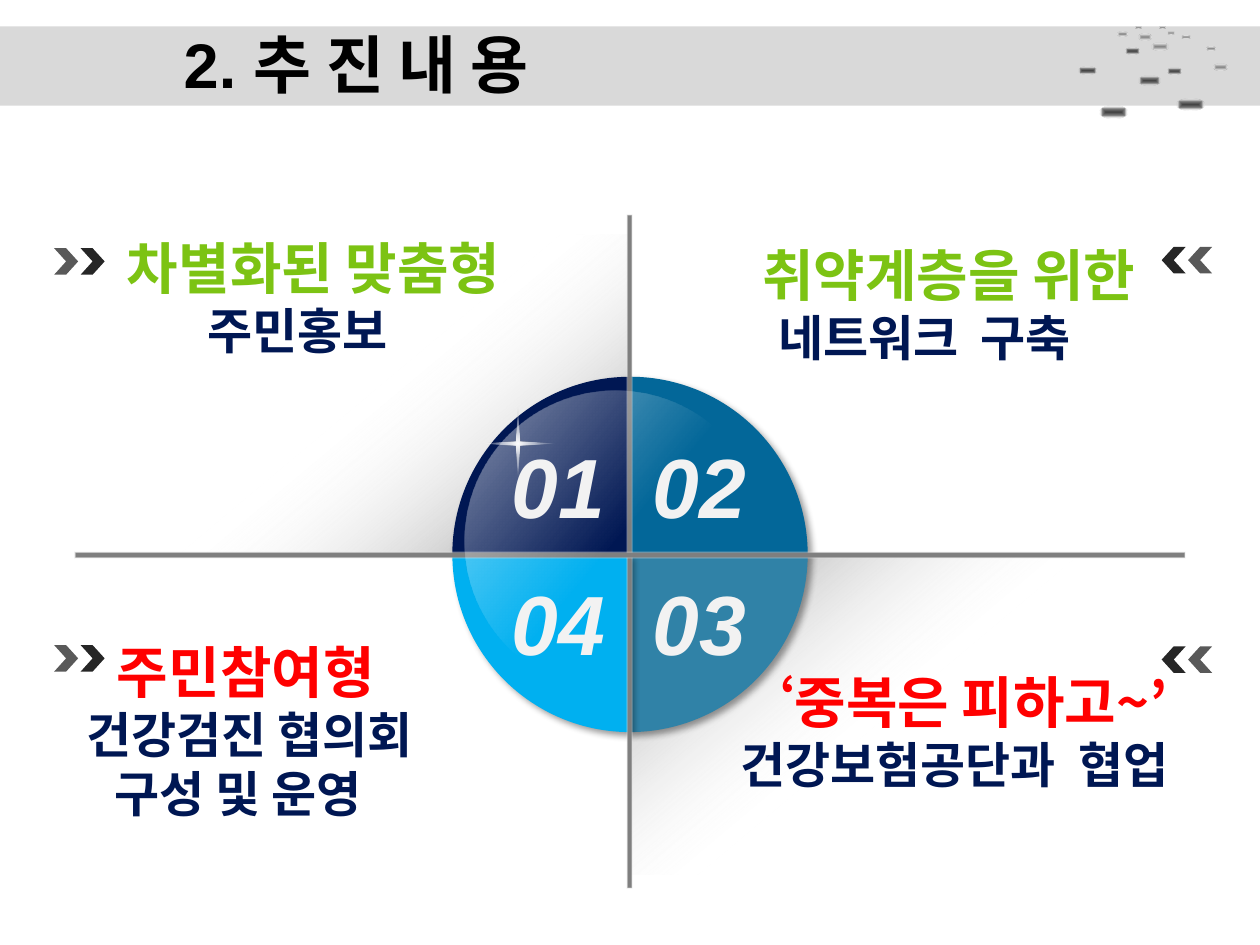
from lxml import etree
from pptx import Presentation
from pptx.dml.color import RGBColor
from pptx.enum.shapes import MSO_SHAPE
from pptx.enum.text import MSO_ANCHOR, MSO_AUTO_SIZE, PP_ALIGN
from pptx.oxml import parse_xml
from pptx.oxml.ns import nsdecls, qn
from pptx.util import Inches, Pt

KOREAN = "Noto Sans CJK KR"
NAVY, GREEN, RED = "001753", "7CC313", "FF0000"

presentation = Presentation()
presentation.slide_width, presentation.slide_height = Inches(10), Inches(7.5)
slide = presentation.slides.add_slide(presentation.slide_layouts[6])


def add_figure(kind, left, top, width, height, fill, direction=None, rotation=0):
    """fill is a hex colour or a list of (position, colour, opacity) stops;
    direction is a gradient angle or the name of a path gradient."""
    shape = slide.shapes.add_shape(
        kind, Inches(left), Inches(top), Inches(width), Inches(height))
    shape.shadow.inherit = False
    shape.line.fill.background()
    shape.rotation = rotation
    if isinstance(fill, str):
        shape.fill.solid()
        shape.fill.fore_color.rgb = RGBColor.from_string(fill)
        return shape
    stops = "".join(
        f'<a:gs pos="{position * 1000}"><a:srgbClr val="{color}">'
        f'<a:alpha val="{opacity * 1000}"/></a:srgbClr></a:gs>'
        for position, color, opacity in fill)
    if isinstance(direction, str):
        course = (f'<a:path path="{direction}"><a:fillToRect l="50000" t="50000" '
                  'r="50000" b="50000"/></a:path>')
    else:
        course = f'<a:lin ang="{direction * 60000}" scaled="0"/>'
    gradient = parse_xml(f'<a:gradFill {nsdecls("a")} rotWithShape="1">'
                         f'<a:gsLst>{stops}</a:gsLst>{course}</a:gradFill>')
    shape._element.spPr.find(qn("a:prstGeom")).addnext(gradient)
    return shape


def add_text(left, top, width, height, lines, font_name=KOREAN, italic=False,
             align=PP_ALIGN.LEFT, wrap=True):
    """Each line is (text, size, colour, left indent in inches)."""
    box = slide.shapes.add_textbox(
        Inches(left), Inches(top), Inches(width), Inches(height))
    frame = box.text_frame
    frame.word_wrap = wrap
    frame.auto_size = MSO_AUTO_SIZE.SHAPE_TO_FIT_TEXT
    for index, (text, size, color, indent) in enumerate(lines):
        paragraph = frame.add_paragraph() if index else frame.paragraphs[0]
        paragraph.text = text
        paragraph.alignment = align
        properties = paragraph._p.get_or_add_pPr()
        properties.set("marL", str(Inches(indent)))
        properties.set("indent", "0")
        font = paragraph.font
        font.name, font.size, font.bold, font.italic = font_name, Pt(size), True, italic
        font.color.rgb = RGBColor.from_string(color)
        east_asian = etree.SubElement(properties.find(qn("a:defRPr")), qn("a:ea"))
        east_asian.set("typeface", KOREAN)
    return frame


# Header band with scattered specks
add_figure(MSO_SHAPE.RECTANGLE, 0, 0.21, 10, 0.63, "D9D9D9")
dark_specks = [
    (8.56, 0.53, 0.14, 0.06), (8.73, 0.84, 0.22, 0.1), (9.34, 0.78, 0.22, 0.1),
    (9.04, 0.6, 0.17, 0.08), (8.93, 0.38, 0.11, 0.05), (9.27, 0.54, 0.11, 0.05)]
light_specks = [
    (9.63, 0.51, 0.11, 0.05), (9.58, 0.37, 0.07, 0.03), (9.38, 0.28, 0.07, 0.03),
    (9.14, 0.34, 0.13, 0.06), (9.04, 0.27, 0.1, 0.05), (8.87, 0.25, 0.08, 0.04),
    (9.01, 0.21, 0.05, 0.02), (9.27, 0.25, 0.05, 0.02), (9.2, 0.21, 0.05, 0.02)]
for specks, inner, middle in ((dark_specks, "404040", "808080"),
                              (light_specks, "808080", "BFBFBF")):
    for speck in specks:
        add_figure(MSO_SHAPE.OVAL, *speck,
                   [(0, inner, 100), (50, middle, 100), (100, "FFFFFF", 0)], "shape")

# Soft shades behind two opposite quadrants
shade = [(0, "808080", 100), (50, "FFFFFF", 0), (100, "FFFFFF", 0)]
for left, top, rotation in ((4.98, 4.39, 180), (0.83, 1.86, 0)):
    add_figure(MSO_SHAPE.RECTANGLE, left, top, 4.17, 2.55, shade, 230, rotation)

# Four quarters of the disc
for color, rotation in ((NAVY, 180), ("036799", 270), ("3082A7", 0), ("00B0F0", 90)):
    quarter = add_figure(MSO_SHAPE.PIE, 3.59, 2.99, 2.82, 2.82, color, rotation=rotation)
    quarter.adjustments[0] = 0
    quarter.adjustments[1] = 54  # 90 degrees
    effects = quarter._element.spPr.find(qn("a:effectLst"))
    effects.append(parse_xml(
        f'<a:outerShdw {nsdecls("a")} blurRad="{Pt(4)}" dist="{Pt(3)}" dir="2700000" '
        'algn="tl" rotWithShape="0"><a:srgbClr val="000000"><a:alpha val="40000"/>'
        '</a:srgbClr></a:outerShdw>'))

# Cross bars
bar = [(0, "808080", 100), (50, "808080", 100), (100, "FFFFFF", 0)]
add_figure(MSO_SHAPE.RECTANGLE, 2.32, 4.35, 5.35, 0.05, bar, "shape", 90)
add_figure(MSO_SHAPE.RECTANGLE, 0.59, 4.38, 8.82, 0.05, bar, "shape")

# Sparkle and gloss on the disc
sparkle = add_figure(MSO_SHAPE.STAR_4_POINT, 3.8, 3.21, 0.62, 0.62,
                     [(0, "FFFFFF", 100), (66, "FFFFFF", 0), (100, "FFFFFF", 0)], "circle")
sparkle.adjustments[0] = 0.04
add_figure(MSO_SHAPE.OVAL, 3.69, 3.1, 2.39, 2.39,
           [(0, "FFFFFF", 0), (50, "FFFFFF", 0), (100, "FFFFFF", 54)], 220)

# Quarter numbers
for number, left, top in (("01", 3.96, 3.4), ("02", 5.08, 3.4),
                          ("04", 3.96, 4.49), ("03", 5.08, 4.49)):
    add_text(left, top, 0.95, 0.91, [(number, 48, "F2F2F2", 0)], "Arial",
             italic=True, wrap=False)

# Chevron pairs pointing inwards
for outer, inner, top, flipped in ((0.43, 0.64, 1.97, False), (9.43, 9.22, 1.96, True),
                                   (0.43, 0.64, 5.12, False), (9.43, 9.22, 5.13, True)):
    for left, color in ((outer, "595959"), (inner, "262626")):
        chevron = add_figure(MSO_SHAPE.CHEVRON, left, top, 0.19, 0.21, color)
        if flipped:
            chevron._element.spPr.find(qn("a:xfrm")).set("flipH", "1")

# Quadrant texts
add_text(0.91, 1.8, 4.17, 1.11,
         [("차별화된 맞춤형", 32, GREEN, 0), ("주민홍보", 28, NAVY, 0.64)])
add_text(5.87, 1.86, 3.54, 1.11,
         [("취약계층을 위한", 32, GREEN, 0.08), ("네트워크  구축", 28, NAVY, 0.21)])
add_text(5.31, 5.25, 4.06, 1.11,
         [("‘중복은 피하고~’", 32, RED, 0), ("건강보험공단과  협업", 28, NAVY, 0)],
         align=PP_ALIGN.RIGHT)
add_text(0.59, 5.01, 3.04, 1.58,
         [("주민참여형", 32, RED, 0.24), ("건강검진 협의회", 28, NAVY, 0),
          ("구성 및 운영", 28, NAVY, 0.22)])

# Title
title = add_text(0.75, 0.25, 8.75, 0.51, [("2. 추 진 내 용", 36, "000000", 0.61)], "Arial")
title.auto_size = MSO_AUTO_SIZE.NONE
title.vertical_anchor = MSO_ANCHOR.MIDDLE

presentation.save("out.pptx")
